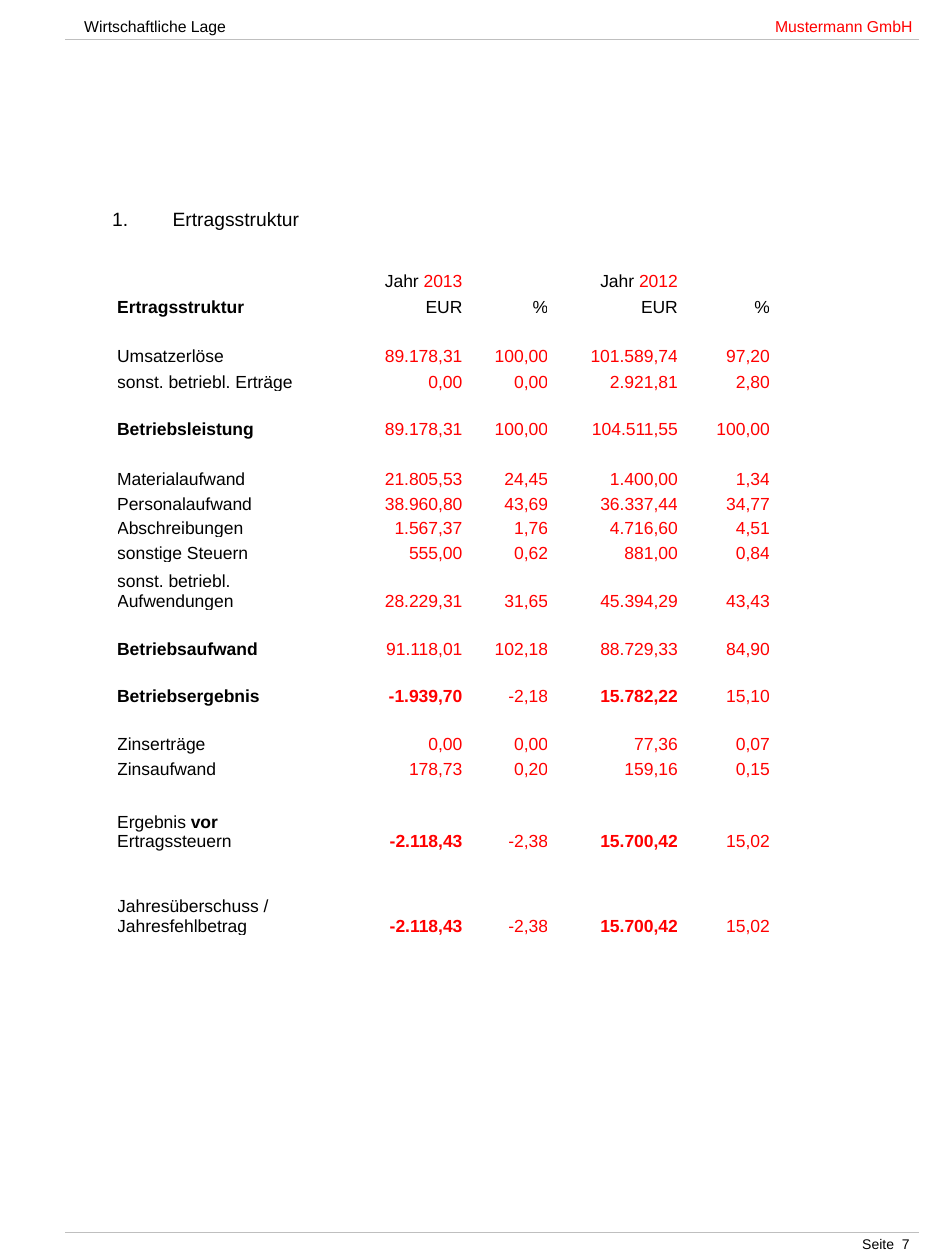
"""Build the income structure page with its header, table and footer."""
from lxml.etree import SubElement
from pptx import Presentation
from pptx.dml.color import RGBColor
from pptx.enum.shapes import MSO_CONNECTOR
from pptx.enum.text import MSO_ANCHOR, MSO_AUTO_SIZE, PP_ALIGN
from pptx.oxml.ns import qn
from pptx.util import Inches, Pt

BLACK = RGBColor(0, 0, 0)
RED = RGBColor(255, 0, 0)
GRAY = RGBColor(0xBF, 0xBF, 0xBF)
FONT = "Arial"

LABELS = [
    ("Wirtschaftliche Lage", 0.57, 0.08, 3, 9, BLACK, PP_ALIGN.LEFT),
    ("Mustermann GmbH", 4.34, 0.08, 3, 9, RED, PP_ALIGN.RIGHT),
    ("Seite  7", 5.32, 9.75, 2, 8, BLACK, PP_ALIGN.RIGHT),
]
RULE_LEFT, RULE_RIGHT = 0.52, 7.29
RULE_TOPS = [0.31, 9.78]

COLUMN_WIDTHS = [1.67, 0.12, 0.95, 0.68, 1.03, 0.73]
VALUE_COLUMNS = [2, 3, 4, 5]
YEARS = {2: "2013", 4: "2012"}
UNITS = ["EUR", "%", "EUR", "%"]
HEADING = "Ertragsstruktur"
GAP = (0.18, "", [])
ROWS = [
    (0.19, "", []),
    (0.2, "Umsatzerlöse", ["89.178,31", "100,00", "101.589,74", "97,20"]),
    (0.2, "sonst. betriebl. Erträge", ["0,00", "0,00", "2.921,81", "2,80"]),
    GAP,
    (0.2, "Betriebsleistung", ["89.178,31", "100,00", "104.511,55", "100,00"]),
    (0.19, "", []),
    (0.2, "Materialaufwand", ["21.805,53", "24,45", "1.400,00", "1,34"]),
    (0.2, "Personalaufwand", ["38.960,80", "43,69", "36.337,44", "34,77"]),
    (0.19, "Abschreibungen", ["1.567,37", "1,76", "4.716,60", "4,51"]),
    (0.2, "sonstige Steuern", ["555,00", "0,62", "881,00", "0,84"]),
    (0.38, "sonst. betriebl. Aufwendungen", ["28.229,31", "31,65", "45.394,29", "43,43"]),
    GAP,
    (0.2, "Betriebsaufwand", ["91.118,01", "102,18", "88.729,33", "84,90"]),
    GAP,
    (0.2, "Betriebsergebnis", ["-1.939,70", "-2,18", "15.782,22", "15,10"]),
    GAP,
    (0.2, "Zinserträge", ["0,00", "0,00", "77,36", "0,07"]),
    (0.2, "Zinsaufwand", ["178,73", "0,20", "159,16", "0,15"]),
    GAP,
    (0.39, "Ergebnis vor Ertragssteuern", ["-2.118,43", "-2,38", "15.700,42", "15,02"]),
    GAP,
    (0.49, "Jahresüberschuss / Jahresfehlbetrag", ["-2.118,43", "-2,38", "15.700,42", "15,02"]),
]
HEAD_HEIGHTS = [0.2, 0.21]
BOLD_LABELS = {HEADING, "Betriebsleistung", "Betriebsaufwand", "Betriebsergebnis"}
BOLD_RESULTS = {"Betriebsergebnis", "Ergebnis vor Ertragssteuern", "Jahresüberschuss / Jahresfehlbetrag"}
BOLD_WORD = " vor "


def style(font, size, colour, bold=False):
    font.name, font.size, font.bold = FONT, Pt(size), bold
    font.color.rgb = colour


def add_label(page, text, left, top, width, size, colour, align):
    box = page.shapes.add_textbox(Inches(left), Inches(top), Inches(width), Inches(0.25))
    frame = box.text_frame
    frame.word_wrap = True
    frame.vertical_anchor = MSO_ANCHOR.MIDDLE
    para = frame.paragraphs[0]
    para.text, para.alignment = text, align
    style(para.font, size, colour)


def add_rule(page, top):
    rule = page.shapes.add_connector(
        MSO_CONNECTOR.STRAIGHT, Inches(RULE_LEFT), Inches(top), Inches(RULE_RIGHT), Inches(top))
    rule.line.color.rgb, rule.line.width = GRAY, Pt(0.1)
    SubElement(rule.element.spPr, qn("a:effectLst"))


def format_title(title):
    title.left, title.top = Inches(0.39), Inches(1.6)
    title.width, title.height = Inches(6.7), Inches(0.28)
    frame = title.text_frame
    frame.auto_size = MSO_AUTO_SIZE.NONE
    frame.vertical_anchor = MSO_ANCHOR.MIDDLE
    para = frame.paragraphs[0]
    para.text, para.alignment = HEADING, PP_ALIGN.LEFT
    properties = para._p.get_or_add_pPr()
    properties.set("marL", str(Inches(0.88)))
    properties.set("indent", str(Inches(-0.48)))
    SubElement(properties, qn("a:buFont"), typeface=FONT)
    SubElement(properties, qn("a:buAutoNum"), type="arabicPeriod")
    style(para.font, 11, BLACK)


def fill_cell(cell, spans, align):
    cell.fill.background()
    cell.margin_left = cell.margin_right = cell.margin_top = cell.margin_bottom = 0
    cell.vertical_anchor = MSO_ANCHOR.BOTTOM
    para = cell.text_frame.paragraphs[0]
    para.alignment = align
    for text, colour, bold in spans:
        span = para.add_run()
        span.text = text
        style(span.font, 10, colour, bold)
    if not spans:
        SubElement(para._p, qn("a:endParaRPr"), sz="1000")


def label_spans(label):
    if BOLD_WORD in label:
        before, after = label.split(BOLD_WORD)
        return [(before + " ", BLACK, False), (BOLD_WORD.strip(), BLACK, True), (" " + after, BLACK, False)]
    return [(label, BLACK, label in BOLD_LABELS)] if label else []


def table_lines():
    yield HEAD_HEIGHTS[0], {
        column: [("Jahr ", BLACK, False), (year, RED, False)] for column, year in YEARS.items()}
    units = {column: [(unit, BLACK, False)] for column, unit in zip(VALUE_COLUMNS, UNITS)}
    yield HEAD_HEIGHTS[1], {0: label_spans(HEADING), **units}
    for height, label, values in ROWS:
        cells = {column: [(value, RED, label in BOLD_RESULTS and column in YEARS)]
                 for column, value in zip(VALUE_COLUMNS, values)}
        yield height, {0: label_spans(label), **cells}


def add_income_table(page):
    lines = list(table_lines())
    table = page.shapes.add_table(
        len(lines), len(COLUMN_WIDTHS), Inches(0.93), Inches(2.11),
        Inches(sum(COLUMN_WIDTHS)), Inches(sum(height for height, _ in lines))).table
    table.first_row = table.horz_banding = False
    for column, width in zip(table.columns, COLUMN_WIDTHS):
        column.width = Inches(width)
    for row, (height, cells) in zip(table.rows, lines):
        row.height = Inches(height)
        for index, cell in enumerate(row.cells):
            fill_cell(cell, cells.get(index, []), PP_ALIGN.RIGHT if index else PP_ALIGN.LEFT)


def main():
    deck = Presentation()
    deck.slide_width, deck.slide_height = Inches(7.5), Inches(10)
    page = deck.slides.add_slide(deck.slide_layouts[5])
    format_title(page.shapes.title)
    for label in LABELS:
        add_label(page, *label)
    for top in RULE_TOPS:
        add_rule(page, top)
    add_income_table(page)
    deck.save("out.pptx")


if __name__ == "__main__":
    main()
